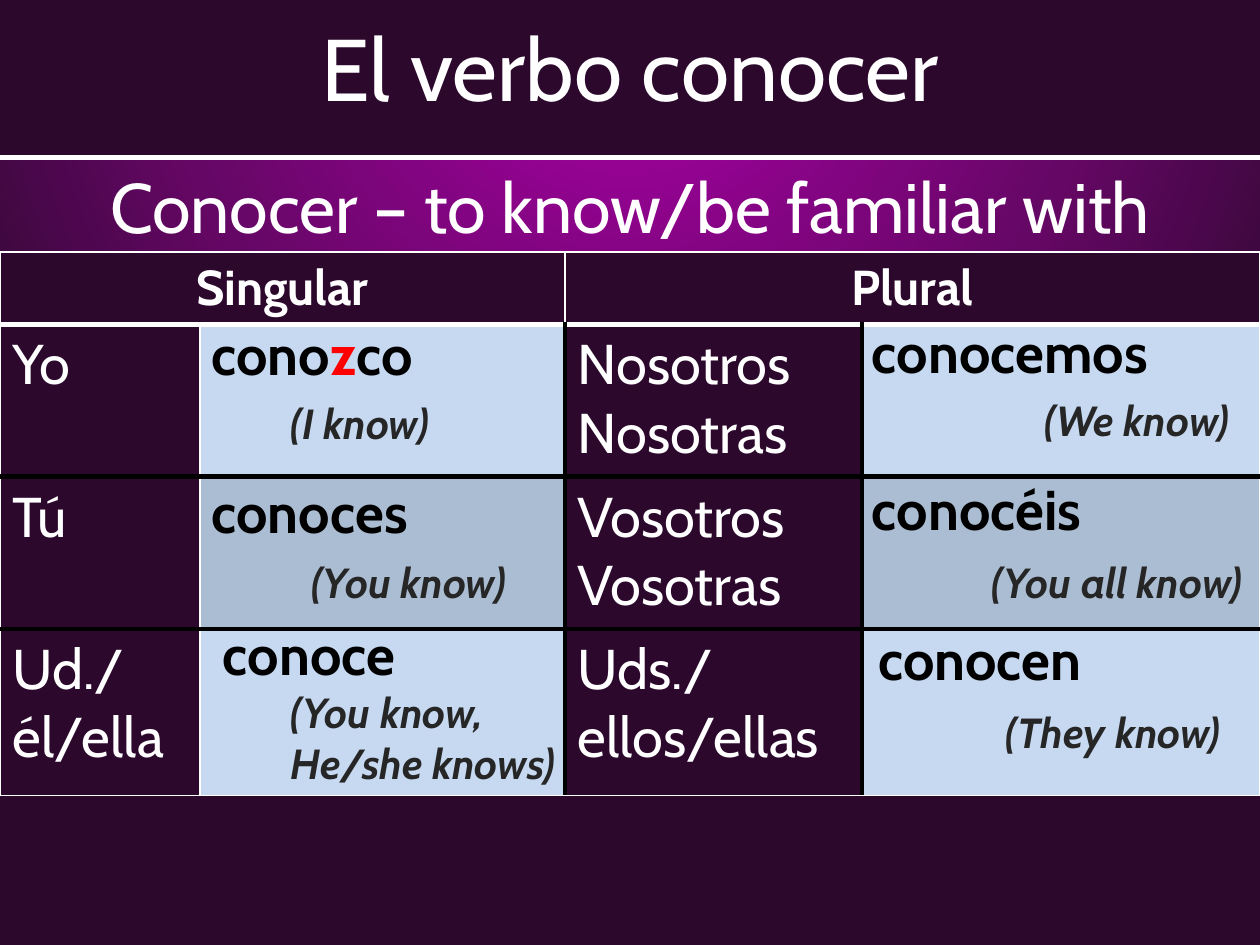
import pptx
import pptx.util
import pptx.dml.color
import pptx.enum.shapes
import pptx.enum.text
import pptx.oxml
import pptx.oxml.ns
import lxml.etree

Cm = pptx.util.Cm
Pt = pptx.util.Pt
RGB = pptx.dml.color.RGBColor
Align = pptx.enum.text.PP_ALIGN
Anchor = pptx.enum.text.MSO_ANCHOR
qn = pptx.oxml.ns.qn

WHITE = RGB(0xFF, 0xFF, 0xFF)
BLACK = RGB(0, 0, 0)
RED = RGB(0xFF, 0, 0)
GREY = RGB(0x26, 0x26, 0x26)
PLUM = RGB(0x2B, 0x08, 0x2C)
SKY = RGB(0xC6, 0xD9, 0xF1)
STEEL = RGB(0xAB, 0xBD, 0xD2)
GLOW = ((0, RGB(0xAE, 0, 0xAB)), (59, RGB(0x65, 0x07, 0x65)), (100, PLUM))

FONT = "Cabin"
WIDTH, HEIGHT = 25.4, 19.05
BAND = 3.18
COLS = (4.03, 7.36, 5.99, 8.02)
ROWS = (1.46, 3.07, 3.07, 3.36)

TITLE = "El verbo conocer"
INTRO = "Conocer – to know/be familiar with"
HEADS = ("Singular", "Plural")
NOUNS = (
    (("Yo",), ("Nosotros", "Nosotras")),
    (("Tú",), ("Vosotros", "Vosotras")),
    (("Ud./él/ella",), ("Uds./ellos/ellas",)),
)
VERBS = (
    ((4.01, 6.35, 7.14, 1.6), (("cono", BLACK), ("z", RED), ("co", BLACK))),
    ((4.01, 9.53, 7.54, 1.6), (("conoces", BLACK),)),
    ((4.24, 12.4, 6.93, 1.7), (("conoce", BLACK),)),
    ((17.32, 6.32, 8.41, 1.73), (("conocemos", BLACK),)),
    ((17.32, 9.47, 6.4, 1.6), (("conocéis", BLACK),)),
    ((17.45, 12.5, 7.8, 1.6), (("conocen", BLACK),)),
)
SENSES = (
    ((5.61, 7.92, 4.47, 1.27), "(I know)"),
    ((6.02, 11.13, 4.47, 1.27), "(You know)"),
    ((5.61, 13.74, 5.97, 2.29), "(You know, He/she knows)"),
    ((20.8, 7.85, 4.47, 1.27), "(We know)"),
    ((19.74, 11.13, 6.15, 1.27), "(You all know)"),
    ((20.02, 14.15, 5.99, 1.27), "(They know)"),
)
PLAIN = "{2D5ABB26-0587-4C30-8999-92F81FD0307C}"


def write(para, text, size, color, bold=False, slant=False, align=None):
    para.alignment = align
    run = para.add_run()
    run.text = text
    font = run.font
    font.name, font.size = FONT, Pt(size)
    font.bold, font.italic = bold, slant
    font.color.rgb = color


def glow(slide):
    slide.background.fill.solid()
    props = slide.background._cSld.find(qn("p:bg")).find(qn("p:bgPr"))
    props.remove(props.find(qn("a:solidFill")))
    stops = "".join(
        f'<a:gs pos="{at * 1000}"><a:srgbClr val="{color}"/></a:gs>'
        for at, color in GLOW
    )
    props.insert(0, pptx.oxml.parse_xml(
        f'<a:gradFill {pptx.oxml.ns.nsdecls("a")} rotWithShape="1">'
        f'<a:gsLst>{stops}</a:gsLst><a:path path="circle">'
        '<a:fillToRect l="50000" t="-80000" r="50000" b="180000"/>'
        '</a:path></a:gradFill>'
    ))


def edge(cell, sides):
    props = cell._tc.get_or_add_tcPr()
    for spot, (side, (color, width)) in enumerate(sides.items()):
        props.insert(spot, pptx.oxml.parse_xml(
            f'<a:ln{side} {pptx.oxml.ns.nsdecls("a")} w="{Pt(width)}">'
            f'<a:solidFill><a:srgbClr val="{color}"/></a:solidFill></a:ln{side}>'
        ))


def grid(slide, box, rows, cols):
    table = slide.shapes.add_table(rows, cols, *map(Cm, box)).table
    table.first_row = table.horz_banding = False
    table._tbl.tblPr.find(qn("a:tableStyleId")).text = PLAIN
    return table


def label(slide, box, runs, size, slant=False):
    cell = grid(slide, box, 1, 1).cell(0, 0)
    cell.fill.background()
    for text, color in runs:
        write(cell.text_frame.paragraphs[0], text, size, color, True, slant)


def chart(slide):
    table = grid(slide, (0, 5.08, WIDTH, sum(ROWS)), len(ROWS), len(COLS))
    for col, wide in zip(table.columns, COLS):
        col.width = Cm(wide)
    for row, high in zip(table.rows, ROWS):
        row.height = Cm(high)
    thin, white, black = (WHITE, 1), (WHITE, 3), (BLACK, 3)
    levels = (thin, white, black, black, thin)
    walls = (thin, thin, black, black, thin)
    for r in range(len(ROWS)):
        for c in range(len(COLS)):
            cell = table.cell(r, c)
            cell.fill.solid()
            dark = r == 0 or c % 2 == 0
            cell.fill.fore_color.rgb = PLUM if dark else STEEL if r == 2 else SKY
            sides = (thin, thin) if r == 0 else walls[c:c + 2]
            edge(cell, dict(zip("LRTB", (*sides, *levels[r:r + 2]))))
    for i, head in enumerate(HEADS):
        cell = table.cell(0, 2 * i)
        cell.merge(table.cell(0, 2 * i + 1))
        write(cell.text_frame.paragraphs[0], head, 28, WHITE, True,
              align=Align.CENTER)
    for r, pair in enumerate(NOUNS, 1):
        for i, lines in enumerate(pair):
            frame = table.cell(r, 2 * i).text_frame
            for n, line in enumerate(lines):
                para = frame.add_paragraph() if n else frame.paragraphs[0]
                write(para, line, 32, WHITE)


def main():
    deck = pptx.Presentation()
    deck.slide_width, deck.slide_height = Cm(WIDTH), Cm(HEIGHT)
    slide = deck.slides.add_slide(deck.slide_layouts[5])
    shapes = slide.shapes
    glow(slide)

    band = shapes.add_shape(pptx.enum.shapes.MSO_SHAPE.RECTANGLE,
                            0, 0, Cm(WIDTH), Cm(BAND))
    band.shadow.inherit = False
    band.fill.solid()
    band.fill.fore_color.rgb = PLUM
    band.line.fill.background()
    shapes._spTree.insert(2, band._element)

    title = shapes.title
    title.left, title.top = Cm(0), Cm(0)
    title.width, title.height = Cm(WIDTH), Cm(2.69)
    title.text_frame.vertical_anchor = Anchor.MIDDLE
    write(title.text_frame.paragraphs[0], TITLE, 50, WHITE, align=Align.CENTER)

    intro = shapes.add_textbox(0, Cm(BAND), Cm(WIDTH), Cm(13.21)).text_frame
    intro.word_wrap = True
    write(intro.paragraphs[0], INTRO, 40, WHITE, align=Align.CENTER)

    rule = shapes.add_connector(pptx.enum.shapes.MSO_CONNECTOR.STRAIGHT,
                                0, Cm(BAND), Cm(WIDTH), Cm(BAND))
    rule.line.color.rgb = WHITE
    rule.line.width = Pt(3)
    lxml.etree.SubElement(rule._element.spPr, qn("a:effectLst"))

    chart(slide)
    for box, runs in VERBS:
        label(slide, box, runs, 32)
    for box, text in SENSES:
        label(slide, box, ((text, GREY),), 24, True)
    deck.save("out.pptx")


if __name__ == "__main__":
    main()
